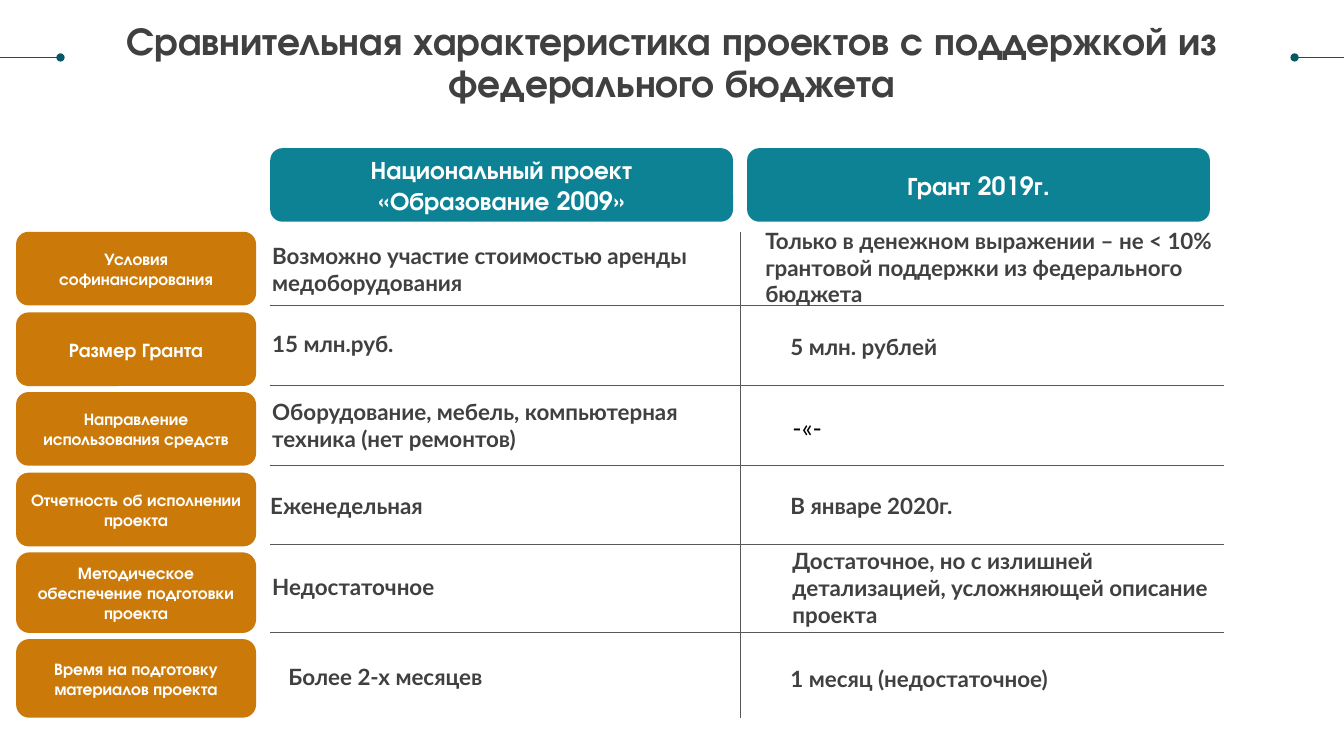
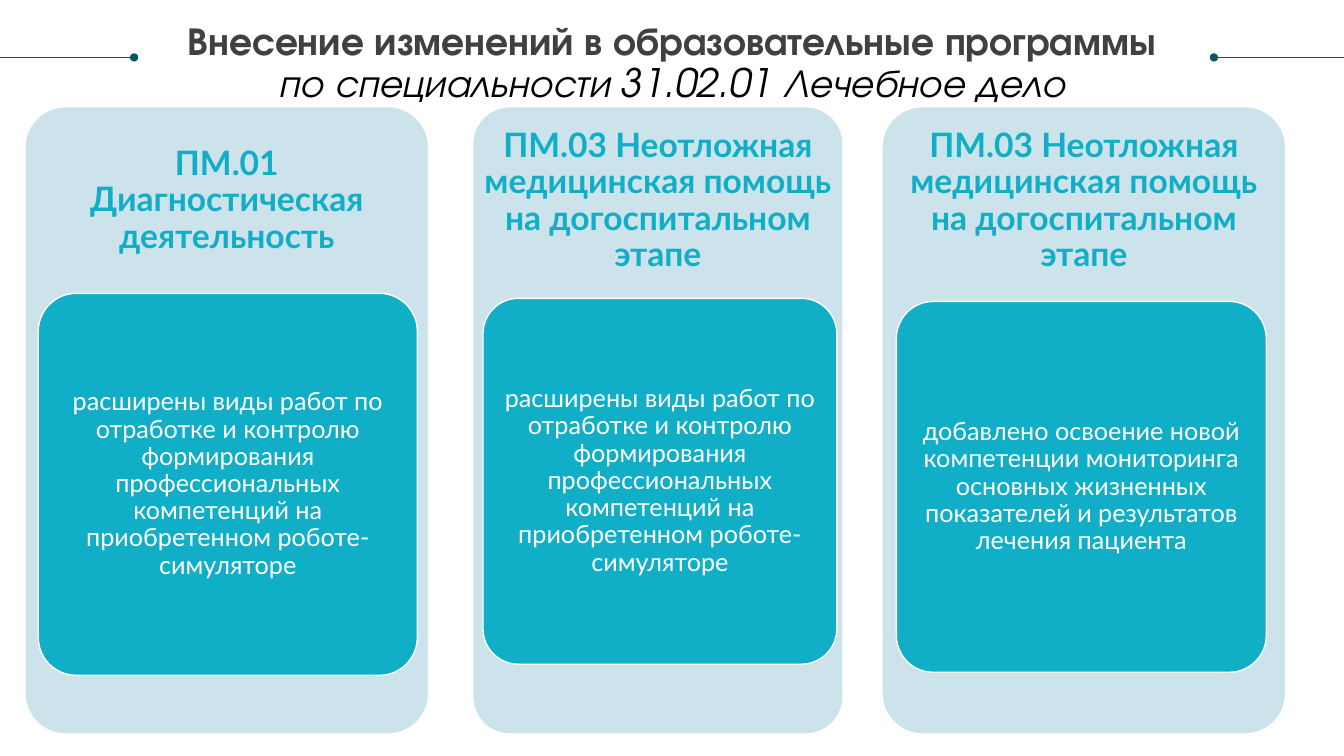
from lxml import etree
from pptx import Presentation
from pptx import util as u
from pptx.dml.color import RGBColor
from pptx.enum import shapes, text
from pptx.oxml.ns import qn

PX = 9144  # EMU in one px, 100 px to the inch
SLIDE_SIZE = (1333, 750)
COLORS = {
    "rule": "085764", "grid": "585858", "ink": "404040", "black": "000000", "white": "FFFFFF",
    "header": "0D8295", "label": "CB7A09", "card": "CCE3EB", "accent": "11AEC7",
}
HEADING_FONT, BODY_FONT = "TeX Gyre Adventor", "Lato"
LINE_SPACING = 0.9
RULE_Y = 57

COMPARISON_TITLE = "Сравнительная характеристика проектов с поддержкой из федерального бюджета"
HEADERS = [("Национальный проект\n«Образование 2009»", 268), ("Грант 2019г.", 741)]
HEADER_TOP, HEADER_WIDTH, HEADER_HEIGHT = 147, 459, 73
LABEL_LEFT, LABEL_WIDTH = 16, 238
LABELS = [  # text, top, height, size
    ("Условия\nсофинансирования", 230, 73, 12),
    ("Размер Гранта", 310, 73, 14),
    ("Направление использования средств", 389, 73, 12),
    ("Отчетность об исполнении проекта", 469, 73, 12),
    ("Методическое обеспечение подготовки проекта", 548, 80, 12),
    ("Время на подготовку материалов проекта", 634, 78, 12),
]
GRID_LEFT, GRID_RIGHT, GRID_TOP, GRID_BOTTOM, GRID_MIDDLE = 268, 1214, 230, 712, 734
ROW_LINES = [303, 382, 462, 540, 627]
CELL_WIDTH, CELL_LINE_HEIGHT = 415, 27
CELLS = [  # text, left, top, number of lines, format
    ("Возможно участие стоимостью аренды медоборудования", 270, 240, 2, {}),
    ("Только в денежном выражении – не < 10% грантовой поддержки из федерального бюджета",
     759, 225, 3, {"width": 455}),
    ("15 млн.руб.", 270, 328, 1, {}),
    ("5 млн. рублей", 784, 331, 1, {}),
    ("Оборудование, мебель, компьютерная техника (нет ремонтов)", 270, 395, 2, {}),
    ("-«-", 786, 409, 1, {"size": 18, "color": "black", "bold": False}),
    ("Еженедельная", 268, 488, 1, {}),
    ("В январе 2020г.", 784, 488, 1, {}),
    ("Недостаточное", 270, 569, 1, {}),
    ("Достаточное, но с излишней детализацией, усложняющей описание проекта", 786, 543, 3, {}),
    ("Более 2-х месяцев", 286, 658, 1, {}),
    ("1 месяц (недостаточное)", 784, 660, 1, {}),
]

PROGRAM_TITLE = "Внесение изменений в образовательные программы"
PROGRAM_SUBTITLE = "по специальности 31.02.01 Лечебное дело"
CARD_TOP, CARD_HEIGHT, CARD_HEAD_HEIGHT = 106, 622, 187
ROBOT_TEXT = ("расширены виды работ по отработке и контролю формирования профессиональных "
              "компетенций на приобретенном роботе-симуляторе")
CARDS = [  # heading, left, width, body, body box
    ("ПМ.01 Диагностическая деятельность", 25, 400, ROBOT_TEXT, (38, 291, 376, 379)),
    ("ПМ.03 Неотложная\nмедицинская помощь на догоспитальном этапе", 469, 367,
     ROBOT_TEXT, (479, 296, 351, 363)),
    ("ПМ.03 Неотложная медицинская помощь на догоспитальном этапе", 875, 400,
     "добавлено освоение новой компетенции мониторинга основных жизненных показателей "
     "и результатов лечения пациента", (889, 299, 367, 368)),
]


def rgb(name):
    return RGBColor.from_string(COLORS[name])


def scaled(*lengths):
    return [u.Emu(length * PX) for length in lengths]


def write_text(shape, content, *, size, color, font=BODY_FONT, bold=False, italic=False,
               centered=False, anchor="TOP", insets=(0, 0), spacing=None):
    """Fill a shape with text, one paragraph a line; insets are (sides, top and bottom)."""
    frame = shape.text_frame
    frame.word_wrap = True
    frame.auto_size = text.MSO_AUTO_SIZE.NONE
    frame.vertical_anchor = text.MSO_ANCHOR[anchor]
    side, edge = scaled(*insets)
    frame.margin_left = frame.margin_right = side
    frame.margin_top = frame.margin_bottom = edge
    frame.text = content
    for paragraph in frame.paragraphs:
        paragraph.alignment = text.PP_ALIGN.CENTER if centered else text.PP_ALIGN.LEFT
        paragraph.line_spacing = spacing
        for run in paragraph.runs:
            run.font.name, run.font.size = font, u.Pt(size)
            run.font.bold, run.font.italic = bold, italic
            run.font.color.rgb = rgb(color)


def add_text(slide, content, box, **text_format):
    write_text(slide.shapes.add_textbox(*scaled(*box)), content, **text_format)


def add_rounded(slide, box, fill, outline=None, outline_width=1, corner=None):
    shape = slide.shapes.add_shape(shapes.MSO_SHAPE.ROUNDED_RECTANGLE, *scaled(*box))
    shape.shadow.inherit = False
    shape.fill.solid()
    shape.fill.fore_color.rgb = rgb(fill)
    if outline:
        shape.line.color.rgb = rgb(outline)
        shape.line.width = u.Pt(outline_width)
    else:
        shape.line.fill.background()
    if corner is not None:
        shape.adjustments[0] = corner
    return shape


def add_line(slide, start, end, color, dot_at_end=False):
    line = slide.shapes.add_connector(shapes.MSO_CONNECTOR.STRAIGHT, *scaled(*start, *end))
    line.line.color.rgb = rgb(color)
    line.line.width = u.Pt(0.5)
    if dot_at_end:
        etree.SubElement(line.line._get_or_add_ln(), qn("a:tailEnd"), type="oval")
    etree.SubElement(line._element.spPr, qn("a:effectLst"))


def add_titled_slide(presentation, title, height, left_rule, right_rule):
    """Add a slide with a title between two dotted rules of the given lengths."""
    slide = presentation.slides.add_slide(presentation.slide_layouts[5])
    shape = slide.shapes.title
    shape.left, shape.top, shape.width, shape.height = scaled(25, 21, 1283, height)
    write_text(shape, title, size=28, color="ink", font=HEADING_FONT, bold=True,
               centered=True, spacing=LINE_SPACING)
    right = SLIDE_SIZE[0]
    add_line(slide, (0, RULE_Y), (left_rule, RULE_Y), "rule", dot_at_end=True)
    add_line(slide, (right, RULE_Y), (right - right_rule, RULE_Y), "rule", dot_at_end=True)
    return slide


def add_comparison(presentation):
    slide = add_titled_slide(presentation, COMPARISON_TITLE, 100, 60, 49)
    boxes = [(content, (left, HEADER_TOP, HEADER_WIDTH, HEADER_HEIGHT), "header", 18)
             for content, left in HEADERS]
    boxes += [(content, (LABEL_LEFT, top, LABEL_WIDTH, height), "label", size)
              for content, top, height, size in LABELS]
    for content, box, fill, size in boxes:
        write_text(add_rounded(slide, box, fill), content, size=size, color="white",
                   font=HEADING_FONT, bold=True, centered=True, anchor="MIDDLE", insets=(10, 5))

    add_line(slide, (GRID_MIDDLE, GRID_TOP), (GRID_MIDDLE, GRID_BOTTOM), "grid")
    for y in ROW_LINES:
        add_line(slide, (GRID_LEFT, y), (GRID_RIGHT, y), "grid")

    for content, left, top, lines, changes in CELLS:
        text_format = {"size": 16, "color": "ink", "bold": True, "width": CELL_WIDTH} | changes
        width = text_format.pop("width")
        add_text(slide, content, (left, top, width, lines * CELL_LINE_HEIGHT), **text_format)


def add_programs(presentation):
    slide = add_titled_slide(presentation, f"{PROGRAM_TITLE}\n{PROGRAM_SUBTITLE}", 85, 133, 129)
    subtitle = slide.shapes.title.text_frame.paragraphs[1].runs[0].font
    subtitle.bold, subtitle.italic = False, True
    subtitle.color.rgb = rgb("black")

    for heading, left, width, body, body_box in CARDS:
        add_rounded(slide, (left, CARD_TOP, width, CARD_HEIGHT), "card", "white", 0.75, corner=0.1)
        add_text(slide, heading, (left, CARD_TOP, width, CARD_HEAD_HEIGHT), size=24,
                 color="accent", bold=True, centered=True, anchor="MIDDLE", insets=(10, 10),
                 spacing=LINE_SPACING)
        panel = add_rounded(slide, body_box, "accent", "white", corner=0.1)
        write_text(panel, body, size=18, color="white", centered=True, anchor="MIDDLE",
                   insets=(5, 4), spacing=LINE_SPACING)


def main():
    presentation = Presentation()
    presentation.slide_width, presentation.slide_height = scaled(*SLIDE_SIZE)
    add_comparison(presentation)
    add_programs(presentation)
    presentation.save("out.pptx")


if __name__ == "__main__":
    main()
